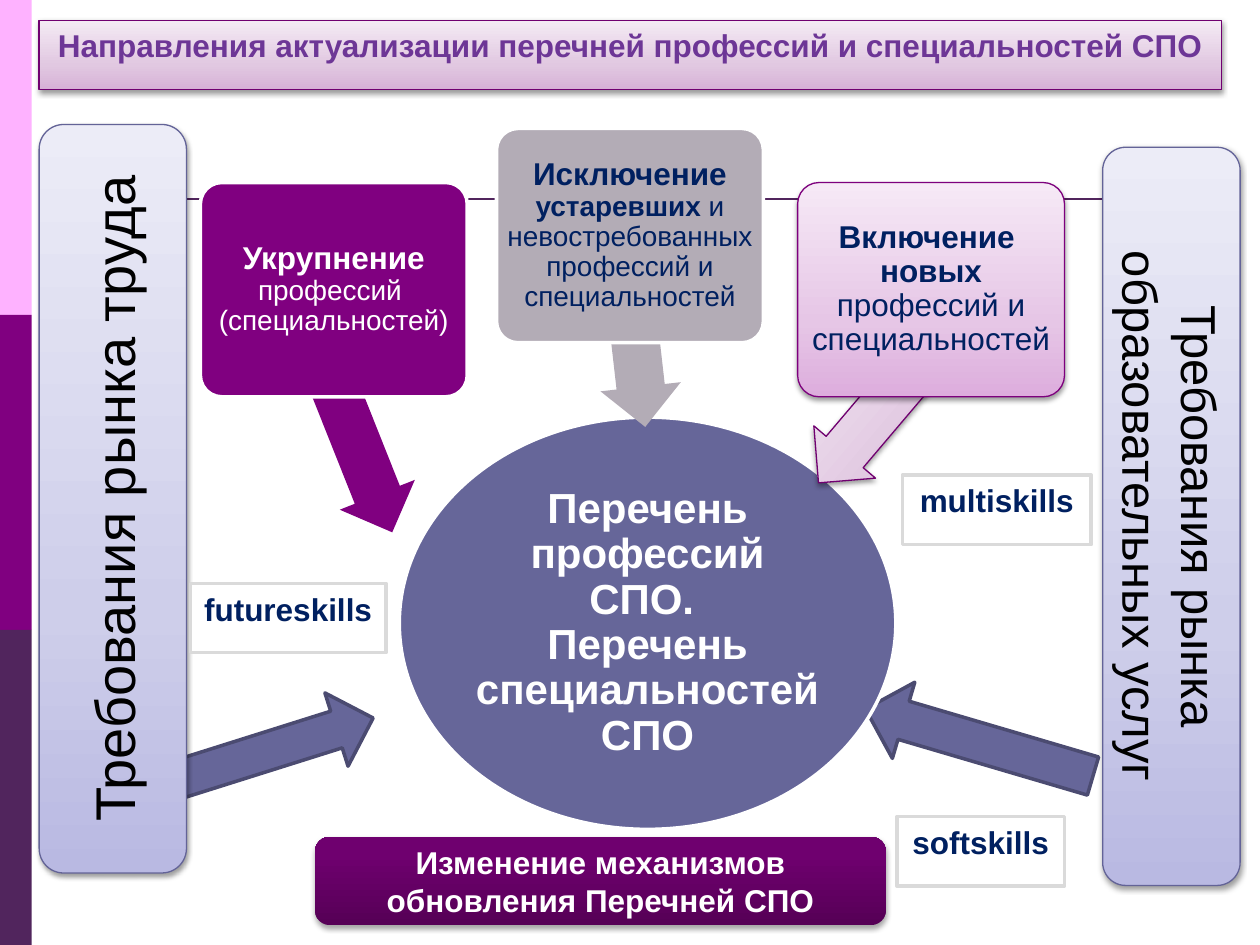
import pptx
import pptx.chart.data
import pptx.dml.color
import pptx.enum.shapes
import pptx.enum.text
import pptx.oxml
import pptx.oxml.ns
import pptx.util

Cm = pptx.util.Cm
Pt = pptx.util.Pt
rgb = pptx.dml.color.RGBColor.from_string
qn = pptx.oxml.ns.qn
kinds = pptx.enum.shapes.MSO_SHAPE
anchors = pptx.enum.text.MSO_ANCHOR


def draw(kind, area, fill, line=None, width=0.75, turn=0, adjust=(), shade=0):
    form = slide.shapes.add_shape(kind, *[Cm(side) for side in area])
    form.rotation = turn
    for index, value in enumerate(adjust):
        form.adjustments[index] = value
    if isinstance(fill, str):
        form.fill.solid()
        form.fill.fore_color.rgb = rgb(fill)
    else:
        form.fill.gradient()
        form.fill.gradient_angle = 90
        stops = form._element.spPr.find(qn("a:gradFill")).find(qn("a:gsLst"))
        for stop in list(stops):
            stops.remove(stop)
        for place, tone in fill:
            stop = stops.makeelement(qn("a:gs"), {"pos": str(place * 1000)})
            stops.append(stop)
            stop.append(stop.makeelement(qn("a:srgbClr"), {"val": tone}))
    if line:
        form.line.color.rgb = rgb(line)
        form.line.width = Pt(width)
    else:
        form.line.fill.background()
    form.shadow.inherit = False
    if shade:
        effects = form._element.spPr.find(qn("a:effectLst"))
        effects.append(pptx.oxml.parse_xml(
            f'<a:outerShdw xmlns:a="http://schemas.openxmlformats.org/drawingml/2006/main" '
            f'blurRad="{Pt(3.1)}" dist="{Pt(1.6)}" dir="5400000" rotWithShape="0">'
            f'<a:srgbClr val="000000"><a:alpha val="{shade * 1000}"/></a:srgbClr></a:outerShdw>'))
    return form


def write(form, parts, color, anchor=anchors.MIDDLE, inset=None, space=None):
    frame = form.text_frame
    frame.word_wrap = True
    frame.vertical_anchor = anchor
    if inset is not None:
        frame.margin_left = frame.margin_right = Cm(inset)
        frame.margin_top = frame.margin_bottom = Cm(inset)
    para = frame.paragraphs[0]
    para.alignment = pptx.enum.text.PP_ALIGN.CENTER
    para.line_spacing = space
    para.font.name = "Arial"
    para.font.color.rgb = rgb(color)
    if len(parts) == 1:
        para.text, size, para.font.bold = parts[0]
        para.font.size = Pt(size)
        return
    for text, size, bold in parts:
        run = para.add_run()
        run.text = text
        run.font.size = Pt(size)
        run.font.bold = bold


deck = pptx.Presentation()
deck.slide_width = Cm(25.4)
deck.slide_height = Cm(19.05)
slide = deck.slides.add_slide(deck.slide_layouts[6])

for index, tone in enumerate(["FEB2FF", "800080", "51255D"]):
    draw(kinds.RECTANGLE, (0, index * 6.35, 0.64, 6.35), tone)

rule = slide.shapes.add_connector(
    pptx.enum.shapes.MSO_CONNECTOR.STRAIGHT, Cm(1.27), Cm(4.01), Cm(23.7), Cm(4.01))
rule.line.color.rgb = rgb("51255D")
rule.line.width = Pt(1.5)
props = rule._element.spPr
props.append(props.makeelement(qn("a:effectLst"), {}))

draw(kinds.LEFT_ARROW, (17.35, 14.17, 4.78, 1.6), "666699", "4B4B71", 2, 16.4)
draw(kinds.RIGHT_ARROW, (3.43, 14.33, 4.19, 1.55), "666699", "4B4B71", 2, 342.5)

core = draw(kinds.OVAL, (8.05, 8.41, 10.01, 8.31), "666699", "FFFFFF", 2)
write(core, [("Перечень профессий СПО. \vПеречень специальностей СПО", 24, True)],
      "FFFFFF", inset=0.05, space=0.9)

pale = [(0, "D6B0D6"), (35, "E1C8E1"), (100, "F4EAF4")]
pink = [(0, "DDADDD"), (35, "E6C6E6"), (100, "F6E9F6")]
steps = [
    (kinds.RIGHT_ARROW, (3.99, 7.26, 5.72, 1.63), 68.3, "800080", None,
     (4.04, 3.68), "800080", "FFFFFF", 2, 0, "FFFFFF",
     [("Укрупнение ", 18, True), ("профессий  (специальностей)", 16, False)]),
    (kinds.LEFT_ARROW, (10.62, 5.66, 4.29, 1.63), 263.5, "B3ACB6", None,
     (10.01, 2.59), "B3ACB6", "FFFFFF", 2, 0, "002060",
     [("Исключение ", 18, True), ("устаревших ", 16, True),
      ("и невостребованных профессий и специальностей", 16, False)]),
    (kinds.LEFT_ARROW, (15.77, 7.34, 4.14, 1.63), 310.3, pale, "700070",
     (16.08, 3.68), pink, "7D007D", 0.75, 38, "002060",
     [("Включение  новых ", 18, True), ("профессий и специальностей", 18, False)]),
]
for kind, area, turn, tint, edge, spot, fill, line, width, shade, color, parts in steps:
    draw(kind, area, tint, edge, turn=turn, adjust=(0.6, 0.5), shade=shade)
    card = draw(kinds.ROUNDED_RECTANGLE, (*spot, 5.38, 4.32), fill, line, width,
                adjust=(0.1,), shade=shade)
    write(card, parts, color, inset=0.08, space=0.9)

title = draw(kinds.RECTANGLE, (0.79, 0.41, 23.83, 1.4), pale, "700070", shade=38)
write(title, [("Направления актуализации перечней профессий и специальностей СПО", 18, True)],
      "6D3696", anchors.TOP)

lilac = [(0, "B9B9E2"), (35, "CECEEA"), (100, "ECECF7")]
for area, way, text, size in [
    ((22.23, 2.97, 2.77, 14.88), "vert", "Требования рынка образовательных услуг", 28),
    ((0.79, 2.51, 2.97, 15.09), "vert270", "Требования рынка труда", 32),
]:
    pillar = draw(kinds.ROUNDED_RECTANGLE, area, lilac, "636397", shade=38)
    write(pillar, [(text, size, False)], "000000")
    pillar.text_frame._txBody.bodyPr.set("vert", way)

plum = [(0, "560056"), (80, "6F006F"), (100, "700070")]
base = draw(kinds.ROUNDED_RECTANGLE, (6.35, 16.87, 11.51, 1.78), plum, shade=35)
write(base, [("Изменение механизмов обновления Перечней СПО", 18, True)], "FFFFFF")

for left, top, width, text in [
    (18.08, 16.46, 3.38, "softskills"),
    (3.84, 11.76, 3.94, "futureskills"),
    (18.19, 9.58, 3.81, "multiskills"),
]:
    tag = draw(kinds.RECTANGLE, (left, top, width, 1.4), "FFFFFF", "DADADA", 2)
    write(tag, [(text, 18, True)], "002060", anchors.TOP)

deck.save("out.pptx")
